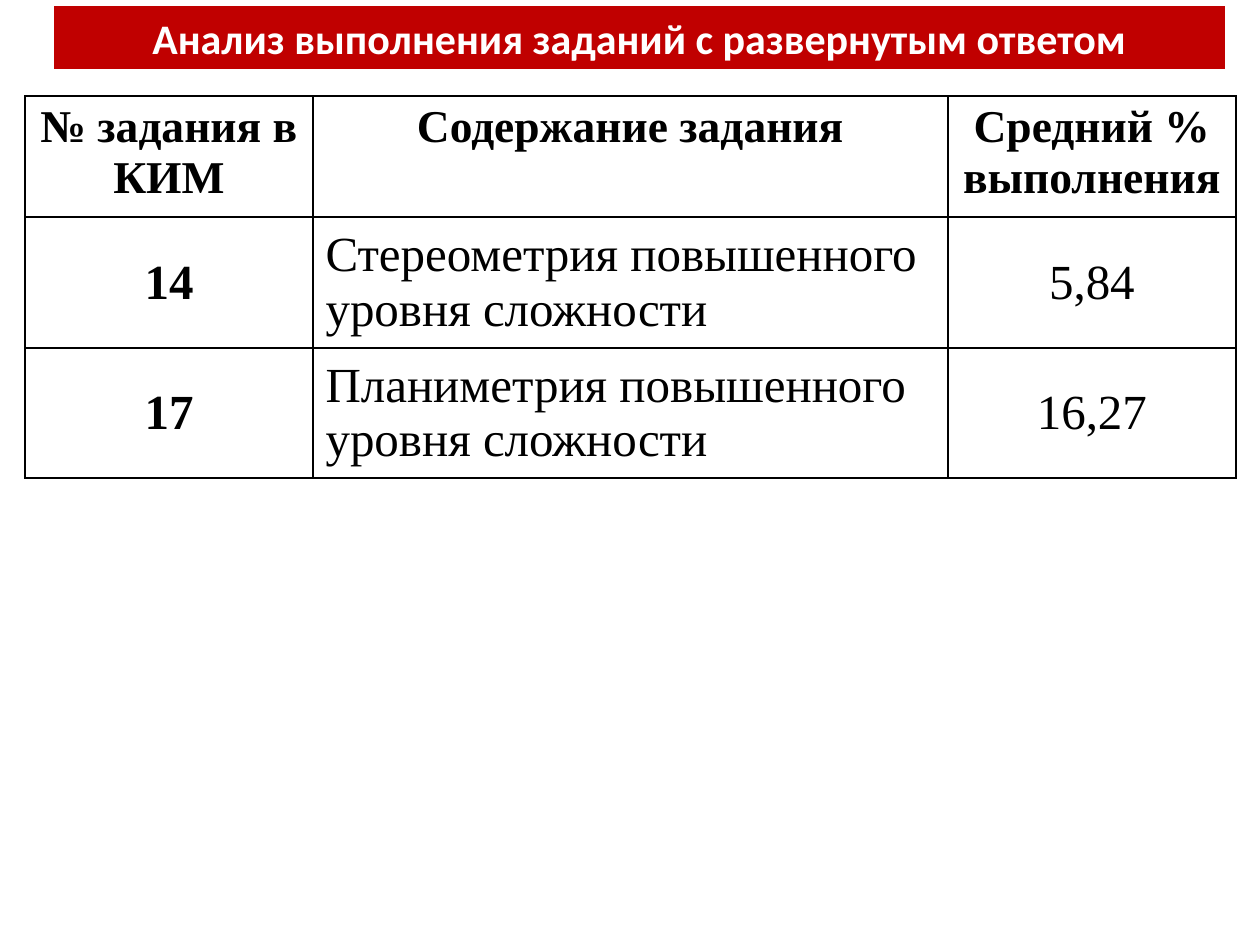
from pptx import Presentation
from pptx.dml.color import RGBColor
from pptx.enum.text import MSO_ANCHOR as Anchor, MSO_AUTO_SIZE as AutoSize, PP_ALIGN as Align
from pptx.oxml import parse_xml
from pptx.oxml.ns import nsdecls
from pptx.util import Emu, Pt

PX = 914400 // 126


def px(length):
    """Turn whole pixels into EMU."""
    return Emu(length * PX)


def color(value):
    """Turn a hex string into a colour."""
    return RGBColor.from_string(value)


def write(frame, text, *, font, size, ink="000000", bold=False, align=Align.CENTER):
    """Fill a text frame with one formatted paragraph."""
    paragraph = frame.paragraphs[0]
    paragraph.alignment = align
    run = paragraph.add_run()
    run.text = text
    run.font.name = font
    run.font.size = Pt(size)
    run.font.bold = bold
    run.font.color.rgb = color(ink)


class SlideBuilder:
    """Holds the style and the slide being built."""

    title_font = "Calibri"
    table_font = "Times New Roman"
    banner = "C00000"
    white = "FFFFFF"
    black = "000000"

    def __init__(self, presentation):
        """Add a title-only slide."""
        self.slide = presentation.slides.add_slide(presentation.slide_layouts[5])

    def title(self, text, left, top, width, height):
        """Place the title as a filled banner."""
        shape = self.slide.shapes.title
        shape.left, shape.top, shape.width, shape.height = map(px, (left, top, width, height))
        shape.fill.solid()
        shape.fill.fore_color.rgb = color(self.banner)
        frame = shape.text_frame
        frame.word_wrap = True
        frame.auto_size = AutoSize.NONE
        frame.vertical_anchor = Anchor.TOP
        write(frame, text, font=self.title_font, size=24, ink=self.white, bold=True)
        frame.paragraphs[0].space_after = Pt(6)

    def borders(self, cell):
        """Draw a thin line on all four sides of a cell."""
        properties = cell._tc.get_or_add_tcPr()
        for index, side in enumerate(("lnL", "lnR", "lnT", "lnB")):
            properties.insert(index, parse_xml(
                f'<a:{side} {nsdecls("a")} w="12700"><a:solidFill>'
                f'<a:srgbClr val="{self.black}"/></a:solidFill></a:{side}>'))

    def table(self, rows, left, top, widths, heights):
        """Add a bordered table with a bold header and first column."""
        graphic = self.slide.shapes.add_table(
            len(rows), len(widths), px(left), px(top), px(sum(widths)), px(sum(heights)))
        table = graphic.table
        table.horz_banding = False
        for column, width in zip(table.columns, widths):
            column.width = px(width)
        for row, height in zip(table.rows, heights):
            row.height = px(height)
        for r, texts in enumerate(rows):
            for c, text in enumerate(texts):
                cell = table.cell(r, c)
                header = r == 0
                cell.fill.background()
                cell.vertical_anchor = Anchor.TOP if header else Anchor.MIDDLE
                if not header and c == 2:
                    cell.margin_left = cell.margin_right = px(5)
                    cell.margin_top = cell.margin_bottom = 0
                write(cell.text_frame, text, font=self.table_font,
                      size=26 if header else 28, ink=self.black, bold=header or c == 0,
                      align=Align.LEFT if c == 1 and not header else Align.CENTER)
                self.borders(cell)


def main():
    """Build and save the slide."""
    presentation = Presentation()
    presentation.slide_width, presentation.slide_height = px(1260), px(945)
    builder = SlideBuilder(presentation)
    builder.title("Анализ выполнения заданий с развернутым ответом", 54, 6, 1171, 63)
    builder.table(
        [("№ задания в КИМ", "Содержание задания", "Средний % выполнения"),
         ("14", "Стереометрия повышенного уровня сложности", "5,84"),
         ("17", "Планиметрия повышенного уровня сложности", "16,27")],
        25, 96, widths=(288, 635, 288), heights=(121, 131, 130))
    presentation.save("out.pptx")


if __name__ == "__main__":
    main()
